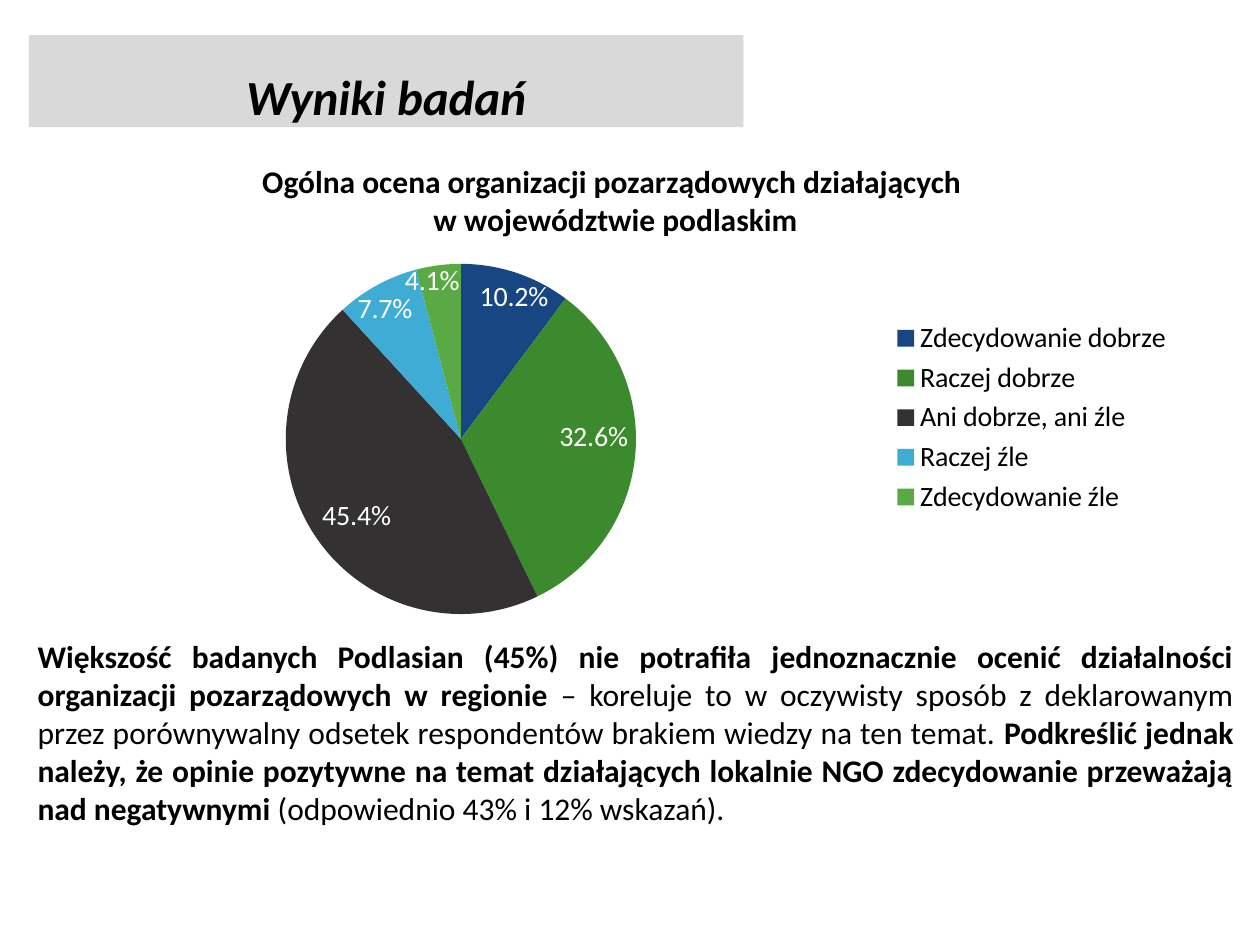
from copy import deepcopy

from pptx import Presentation
from pptx.chart.data import CategoryChartData as ChartData
from pptx.dml.color import RGBColor as RGB
from pptx.enum.chart import XL_CHART_TYPE as Kind
from pptx.enum.chart import XL_LABEL_POSITION as LabelPos
from pptx.enum.chart import XL_LEGEND_POSITION as LegendPos
from pptx.enum.shapes import MSO_SHAPE as Shape
from pptx.enum.text import MSO_ANCHOR as Anchor
from pptx.enum.text import PP_ALIGN as Align
from pptx.oxml import parse_xml
from pptx.oxml.ns import nsdecls
from pptx.util import Inches, Pt

FONT = "Calibri"
COLORS = {"text": "000000", "label": "FFFFFF", "band": "D9D9D9"}
RATINGS = [
    ("Zdecydowanie dobrze", 10.2, "184683"),
    ("Raczej dobrze", 32.6, "3C8A2E"),
    ("Ani dobrze, ani źle", 45.4, "333131"),
    ("Raczej źle", 7.7, "3FACD6"),
    ("Zdecydowanie źle", 4.1, "59AA44"),
]
# Label shifts of the narrow slices, as fractions of the chart
SHIFTS = {0: (0.03, 0), 3: (-0.02, 0), 4: (-0.03, -0.02)}
HEADING = "Ogólna ocena organizacji pozarządowych działających \vw województwie podlaskim"
SUMMARY = [
    ("Większość badanych Podlasian (45%) nie potrafiła jednoznacznie ocenić "
     "działalności organizacji pozarządowych w regionie", True),
    (" – koreluje to w oczywisty sposób z deklarowanym przez porównywalny "
     "odsetek respondentów brakiem wiedzy na ten temat. ", False),
    ("Podkreślić jednak należy, że opinie pozytywne na temat działających "
     "lokalnie NGO zdecydowanie przeważają nad negatywnymi ", True),
    ("(odpowiednio 43% i 12% wskazań).", False),
]


def style(font, size, color="text"):
    font.name = FONT
    font.size = Pt(size)
    font.color.rgb = RGB.from_string(COLORS[color])


def paint(fill, color):
    fill.solid()
    fill.fore_color.rgb = RGB.from_string(color)


def add_title(slide, text, *box):
    band = slide.shapes.add_shape(Shape.RECTANGLE, *map(Inches, box))
    band.shadow.inherit = False
    paint(band.fill, COLORS["band"])
    band.line.fill.background()
    frame = band.text_frame
    frame.vertical_anchor = Anchor.MIDDLE
    para = frame.paragraphs[0]
    para.text = text
    para.alignment = Align.CENTER
    para.line_spacing = 1.5
    style(para.font, 28)
    para.font.bold = para.font.italic = True


def add_text(slide, align, *box):
    """Add a wrapping text box and return its paragraph."""
    frame = slide.shapes.add_textbox(*map(Inches, box)).text_frame
    frame.word_wrap = True
    para = frame.paragraphs[0]
    para.alignment = align
    style(para.font, 18)
    return para


def make_layout(**parts):
    sizes = "".join(f'<c:{key} val="{val}"/>' for key, val in parts.items())
    return parse_xml(f'<c:layout {nsdecls("c")}><c:manualLayout>'
                     f'{sizes}</c:manualLayout></c:layout>')


def set_plot(chart, **parts):
    """Place the inner plot area by fractions of the chart."""
    area = chart.plots[0]._element.getparent()
    for old in area.findall("{*}layout"):
        area.remove(old)
    area.insert(0, make_layout(layoutTarget="inner", xMode="edge", yMode="edge", **parts))


def shift_labels(labels):
    """Give the narrow slices labels of their own, moved apart."""
    root = labels._element
    shared = [item for item in root if not item.tag.endswith("showLeaderLines")]
    for i, (key, (x, y)) in enumerate(SHIFTS.items()):
        label = parse_xml(f'<c:dLbl {nsdecls("c")}><c:idx val="{key}"/></c:dLbl>')
        label.append(make_layout(x=x, y=y))
        label.extend(map(deepcopy, shared))
        root.insert(i, label)


def add_pie(slide, *box):
    names, values, colors = zip(*RATINGS)
    data = ChartData()
    data.categories = names
    data.add_series("Series 1", values)
    chart = slide.shapes.add_chart(Kind.PIE, *map(Inches, box), data).chart
    style(chart.font, 14)
    chart.has_title = False
    chart.has_legend = True
    legend = chart.legend
    legend.position = LegendPos.RIGHT
    legend.include_in_layout = False
    style(legend.font, 16)

    plot = chart.plots[0]
    plot.vary_by_categories = True
    series = plot.series[0]
    for i, color in enumerate(colors):
        paint(series.points[i].format.fill, color)
    labels = series.data_labels
    labels.show_value = False
    labels.show_percentage = True
    labels.number_format = "0.0%"
    labels.number_format_is_linked = False
    labels.position = LabelPos.INSIDE_END
    style(labels.font, 16, "label")
    shift_labels(labels)
    set_plot(chart, x=0.21, y=0.14, w=0.32, h=0.82)


def main():
    prs = Presentation()
    prs.slide_width, prs.slide_height = Inches(10), Inches(7.5)
    slide = prs.slides.add_slide(prs.slide_layouts[6])

    heading = add_text(slide, Align.CENTER, 0.2, 1.24, 9.37, 0.71)
    heading.text = HEADING
    heading.font.bold = True

    summary = add_text(slide, Align.JUSTIFY, 0.2, 5.01, 9.69, 1.62)
    for text, bold in SUMMARY:
        run = summary.add_run()
        run.text = text
        run.font.bold = bold

    add_pie(slide, 0.28, 1.62, 9.13, 3.39)
    add_title(slide, "Wyniki badań", 0.23, 0.28, 5.67, 0.73)
    prs.save("out.pptx")


if __name__ == "__main__":
    main()
